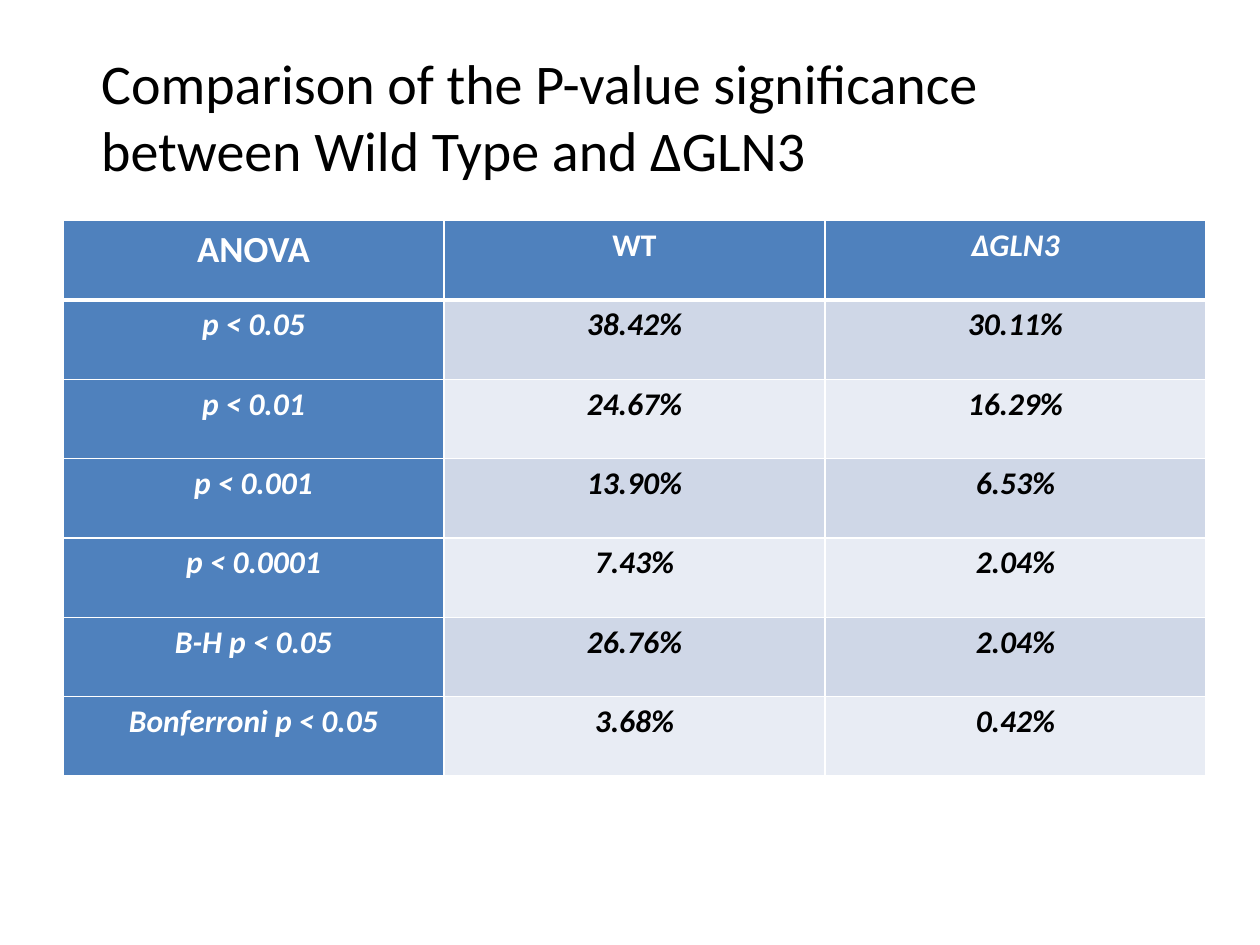
from lxml import etree
from pptx import Presentation
from pptx import util as u
from pptx.dml.color import RGBColor
from pptx.enum import text
from pptx.oxml import ns

COLORS = {
    "header": "4F81BD",
    "band_dark": "CFD7E7",
    "band_light": "E8ECF4",
    "rule": "FFFFFF",
    "header_text": "FFFFFF",
    "body_text": "000000",
}
FONT = "Calibri"
HEADING = "Comparison of the P-value significance between Wild Type and ΔGLN3"
RESULTS = [
    ("ANOVA", "WT", "ΔGLN3"),
    ("p < 0.05", "38.42%", "30.11%"),
    ("p < 0.01", "24.67%", "16.29%"),
    ("p < 0.001", "13.90%", "6.53%"),
    ("p < 0.0001", "7.43%", "2.04%"),
    ("B-H p < 0.05", "26.76%", "2.04%"),
    ("Bonferroni p < 0.05", "3.68%", "0.42%"),
]


def color(name):
    """Return the palette colour of the given name."""
    return RGBColor.from_string(COLORS[name])


def style_font(font, size, color_name, bold=False, italic=False):
    """Apply typeface, size, colour and emphasis to a font."""
    font.name, font.size = FONT, u.Pt(size)
    font.bold, font.italic = bold, italic
    font.color.rgb = color(color_name)


def add_borders(cell, widths):
    """Draw the cell's rules from a mapping of side to width in points."""
    properties = cell._tc.get_or_add_tcPr()
    for position, side in enumerate("LRTB"):
        rule = etree.Element(ns.qn(f"a:ln{side}"), w=str(u.Pt(widths[side])))
        fill = etree.SubElement(rule, ns.qn("a:solidFill"))
        etree.SubElement(fill, ns.qn("a:srgbClr"), val=COLORS["rule"])
        properties.insert(position, rule)


def place_heading(slide, left, top, width, height):
    """Fill the title placeholder and fit it to the given box."""
    heading = slide.shapes.title
    heading.left, heading.top, heading.width, heading.height = left, top, width, height
    frame = heading.text_frame
    frame.text = HEADING
    frame.word_wrap = True
    frame.auto_size = text.MSO_AUTO_SIZE.NONE
    frame.vertical_anchor = text.MSO_ANCHOR.TOP
    frame.margin_left = frame.margin_right = u.Cm(0.13)
    frame.margin_top = frame.margin_bottom = u.Cm(0.13)
    line = frame.paragraphs[0]
    line.alignment = text.PP_ALIGN.LEFT
    style_font(line.runs[0].font, 32, "body_text")


def fill_result(cell, value, row, column):
    """Write one result and style it by its row and column."""
    is_header = row == 0 or column == 0
    band = "band_dark" if row % 2 else "band_light"
    cell.fill.solid()
    cell.fill.fore_color.rgb = color("header" if is_header else band)
    cell.margin_left = cell.margin_right = cell.margin_top = cell.margin_bottom = 0
    add_borders(cell, {"L": 1, "R": 1, "T": 3 if row == 1 else 1, "B": 3 if row == 0 else 1})
    cell.text_frame.text = value
    line = cell.text_frame.paragraphs[0]
    line.alignment = text.PP_ALIGN.CENTER
    line.line_spacing = 1.15
    style_font(
        line.runs[0].font,
        21 if row == column == 0 else 18,
        "header_text" if is_header else "body_text",
        bold=True,
        italic=row > 0 or column == 2,
    )


def place_results(slide, left, top, width, height):
    """Add the significance table with equal rows and columns in the given box."""
    row_count, column_count = len(RESULTS), len(RESULTS[0])
    results = slide.shapes.add_table(row_count, column_count, left, top, width, height).table
    for column in results.columns:
        column.width = width // column_count
    for row, values in enumerate(RESULTS):
        results.rows[row].height = height // row_count
        for column, value in enumerate(values):
            fill_result(results.cell(row, column), value, row, column)


def main():
    """Build and save the slide."""
    deck = Presentation()
    deck.slide_width, deck.slide_height = u.Cm(25.4), u.Cm(19.05)
    slide = deck.slides.add_slide(deck.slide_layouts[5])
    place_results(slide, u.Cm(1.27), u.Cm(4.45), u.Cm(23.04), u.Cm(11.2))
    place_heading(slide, u.Cm(1.91), u.Cm(0.84), u.Cm(20.5), u.Cm(2.87))
    deck.save("out.pptx")


if __name__ == "__main__":
    main()
